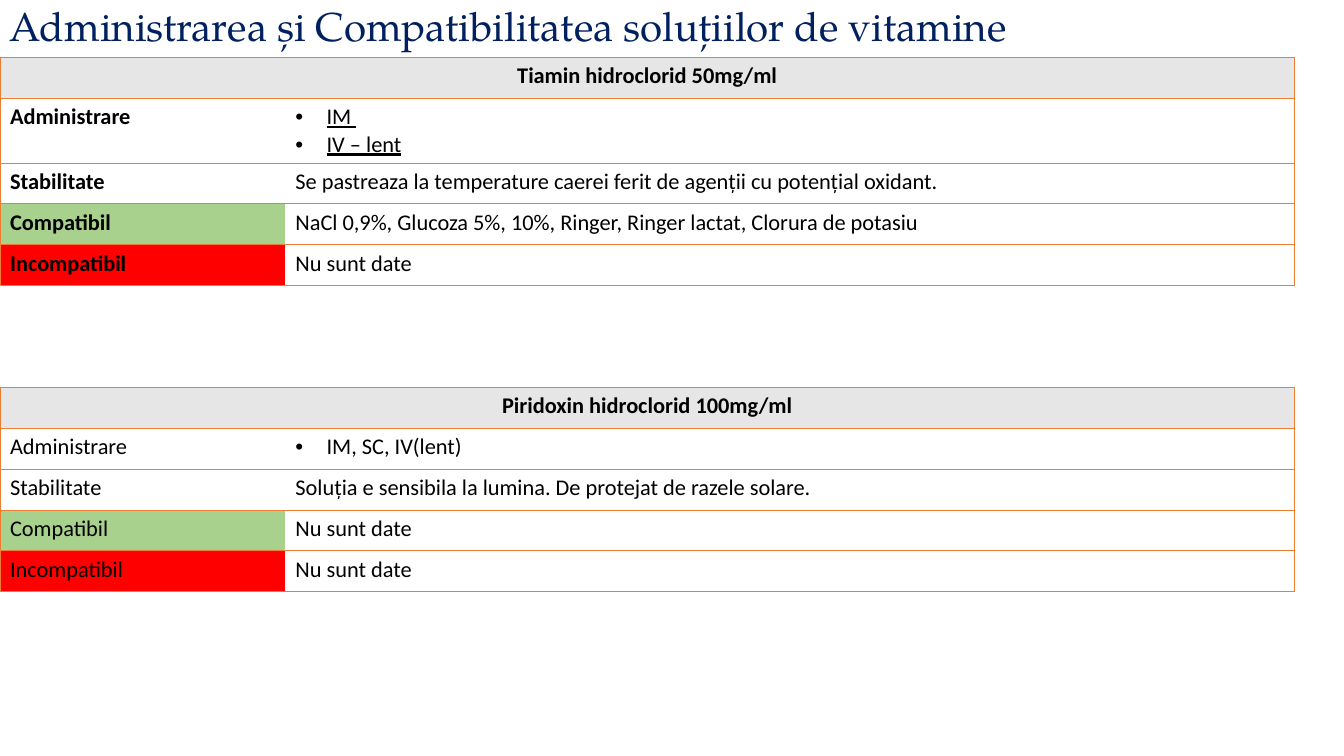
from dataclasses import dataclass

from lxml import etree
from pptx import Presentation
from pptx.dml import color
from pptx.enum import text
from pptx.oxml import ns
from pptx.util import Inches, Pt

ORANGE, GREY, GREEN, RED = "ED7D31", "E7E6E6", "A9D18E", "FF0000"
BLACK, NAVY = "000000", "002060"
LABELS = ["Administrare", "Stabilitate", "Compatibil", "Incompatibil"]
LABEL_FILLS = [None, None, GREEN, RED]
COLUMNS = [2.83, 10.01]
ROW_HEIGHT = 2.03 / 5


@dataclass
class Vitamin:
    name: str
    top: float
    routes: list[str]
    details: list[str]
    route_height: float = ROW_HEIGHT
    bold_labels: bool = False
    underline_routes: bool = False


VITAMINS = [
    Vitamin(
        "Piridoxin hidroclorid 100mg/ml", 3.84, ["IM, SC, IV(lent)"],
        ["Soluția e sensibila la lumina. De protejat de razele solare.",
         "Nu sunt date", "Nu sunt date"],
    ),
    Vitamin(
        "Tiamin hidroclorid 50mg/ml", 0.57, ["IM ", "IV – lent"],
        ["Se pastreaza la temperature caerei ferit de agenții cu potențial oxidant.",
         "NaCl 0,9%, Glucoza 5%, 10%, Ringer, Ringer lactat, Clorura de potasiu",
         "Nu sunt date"],
        route_height=0.64, bold_labels=True, underline_routes=True,
    ),
]


def rgb(value: str) -> color.RGBColor:
    return color.RGBColor.from_string(value)


def set_font(p, name: str, size: float, hex_color: str, bold: bool = False) -> None:
    p.font.name, p.font.size, p.font.bold = name, Pt(size), bold
    p.font.color.rgb = rgb(hex_color)


def add_borders(cell, sides: str) -> None:
    """Draw the sides named among L, R, T and B; clear the others."""
    tc_pr = cell._tc.get_or_add_tcPr()
    for side in "LRTB":
        ln = etree.SubElement(tc_pr, ns.qn(f"a:ln{side}"), w=str(Pt(0.5)))
        if side in sides:
            fill = etree.SubElement(ln, ns.qn("a:solidFill"))
            etree.SubElement(fill, ns.qn("a:srgbClr"), val=ORANGE)
        else:
            etree.SubElement(ln, ns.qn("a:noFill"))


def add_bullet(p) -> None:
    p_pr = p._p.get_or_add_pPr()
    p_pr.set("marL", str(Inches(0.31)))
    p_pr.set("indent", str(Inches(-0.31)))
    bullet_font = etree.Element(ns.qn("a:buFont"), typeface="Arial")
    bullet = etree.Element(ns.qn("a:buChar"), char="•")
    p_pr.insert(0, bullet_font)
    p_pr.insert(1, bullet)


def fill_cell(cell, lines: list[str], sides: str, fill: str | None = None,
              bold: bool = False) -> None:
    add_borders(cell, sides)
    if fill:
        cell.fill.solid()
        cell.fill.fore_color.rgb = rgb(fill)
    else:
        cell.fill.background()
    cell.text_frame.text = "\n".join(lines)
    for p in cell.text_frame.paragraphs:
        set_font(p, "Calibri", 16, BLACK, bold)


def add_vitamin_table(s, vitamin: Vitamin) -> None:
    heights = [ROW_HEIGHT, vitamin.route_height] + [ROW_HEIGHT] * 3
    table = s.shapes.add_table(
        len(heights), len(COLUMNS), 0, Inches(vitamin.top),
        Inches(sum(COLUMNS)), Inches(sum(heights))).table
    table.first_row = table.horz_banding = False
    for column, width in zip(table.columns, COLUMNS):
        column.width = Inches(width)
    for row, height in zip(table.rows, heights):
        row.height = Inches(height)

    header = table.cell(0, 0)
    header.merge(table.cell(0, 1))
    fill_cell(header, [vitamin.name], "LRTB", GREY, bold=True)
    header.text_frame.paragraphs[0].alignment = text.PP_ALIGN.CENTER
    add_borders(table.cell(0, 1), "RTB")

    values = [vitamin.routes] + [[detail] for detail in vitamin.details]
    for i, (label, fill, lines) in enumerate(zip(LABELS, LABEL_FILLS, values), 1):
        fill_cell(table.cell(i, 0), [label], "LTB", fill, vitamin.bold_labels)
        fill_cell(table.cell(i, 1), lines, "RTB")
    for p in table.cell(1, 1).text_frame.paragraphs:
        add_bullet(p)
        p.font.underline = vitamin.underline_routes
        for r in p.runs:
            r.font.underline = vitamin.underline_routes


def add_title(s) -> None:
    tf = s.shapes.add_textbox(0, 0, Inches(11.5), Inches(0.57)).text_frame
    tf.word_wrap = True
    tf.vertical_anchor = text.MSO_ANCHOR.MIDDLE
    p = tf.paragraphs[0]
    p.text = "Administrarea și Compatibilitatea soluțiilor de vitamine"
    p.line_spacing = 0.9
    set_font(p, "TeX Gyre Pagella", 28.8, NAVY)


def main() -> None:
    prs = Presentation()
    prs.slide_width, prs.slide_height = Inches(13.33), Inches(7.5)
    s = prs.slides.add_slide(prs.slide_layouts[6])
    add_title(s)
    for vitamin in VITAMINS:
        add_vitamin_table(s, vitamin)
    prs.save("out.pptx")


if __name__ == "__main__":
    main()
